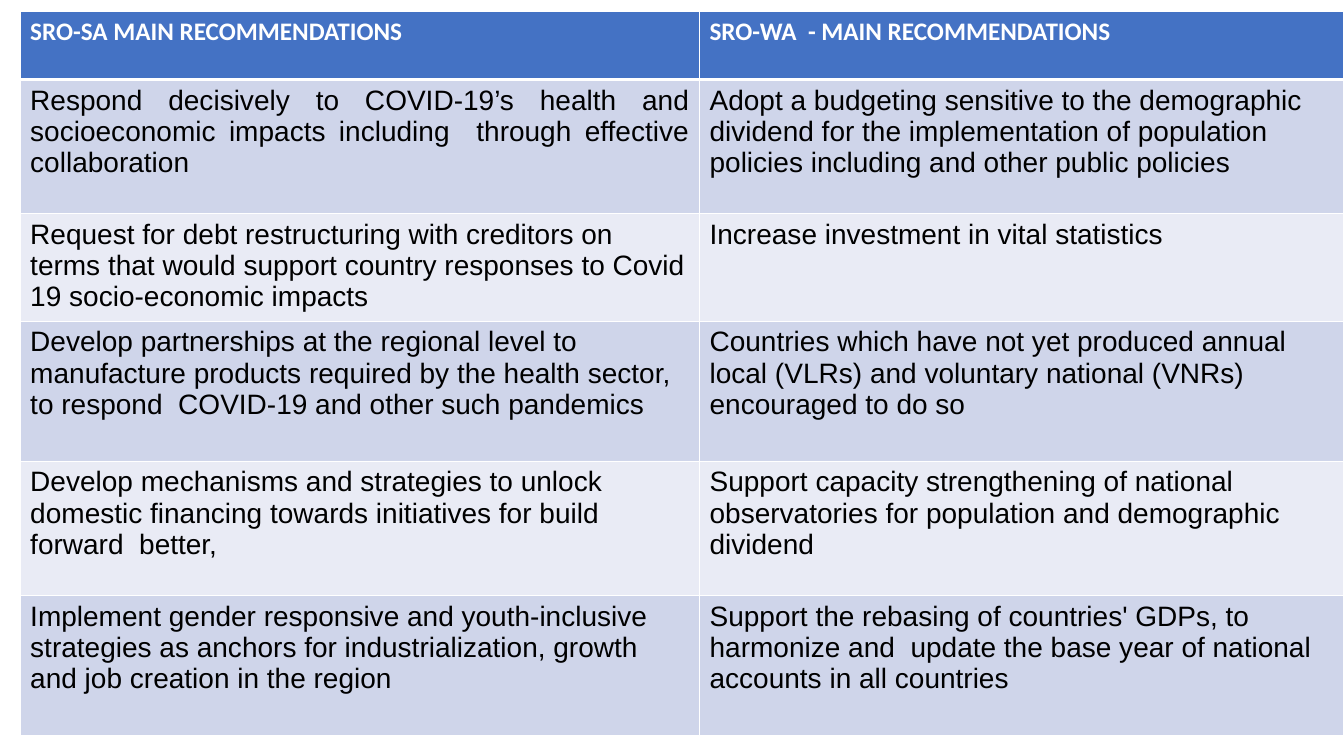
from lxml import etree
from pptx import Presentation
from pptx import util as u
from pptx.dml import color
from pptx.enum import text
from pptx.oxml import ns

COLORS = {"header": "4472C4", "odd": "CFD5EA", "even": "E9EBF5",
          "white": "FFFFFF", "black": "000000"}
COLUMN_WIDTHS = [485.28, 460.08]
ROW_HEIGHTS = [48.96, 95.76, 77.04, 100.08, 95.76, 100.08]
RECOMMENDATIONS = [
    ("SRO-SA MAIN RECOMMENDATIONS", "SRO-WA  - MAIN RECOMMENDATIONS"),
    ("Respond decisively to COVID-19’s health and socioeconomic impacts including  through effective collaboration",
     "Adopt a budgeting sensitive to the demographic dividend for the implementation of population policies including and other public policies"),
    ("Request for debt restructuring with creditors on terms that would support country responses to Covid 19 socio-economic impacts",
     "Increase investment in vital statistics"),
    ("Develop partnerships at the regional level to manufacture products required by the health sector, to respond  COVID-19 and other such pandemics",
     "Countries which have not yet produced annual local (VLRs) and voluntary national (VNRs) encouraged to do so"),
    ("Develop mechanisms and strategies to unlock domestic financing towards initiatives for build forward  better,",
     "Support capacity strengthening of national observatories for population and demographic dividend"),
    ("Implement gender responsive and youth-inclusive strategies as anchors for industrialization, growth and job creation in the region",
     "Support the rebasing of countries' GDPs, to harmonize and  update the base year of national accounts in all countries"),
]


class SlideBuilder:
    """Draws styled elements on the current slide."""

    def __init__(self, slide, colors):
        self.slide = slide
        self.colors = colors

    def table(self, left, top, widths, heights, rows):
        frame = self.slide.shapes.add_table(
            len(heights), len(widths), u.Pt(left), u.Pt(top),
            u.Pt(sum(widths)), u.Pt(sum(heights)))
        table = frame.table
        for column, width in zip(table.columns, widths):
            column.width = u.Pt(width)
        for row, height in zip(table.rows, heights):
            row.height = u.Pt(height)
        for row_index, row in enumerate(rows):
            for column_index, wording in enumerate(row):
                self.cell(table.cell(row_index, column_index), wording, row_index)
        return table

    def cell(self, cell, wording, row_index):
        is_header = row_index == 0
        self.border(cell, "lnL", 1)
        self.border(cell, "lnR", 1)
        self.border(cell, "lnT", 3 if row_index == 1 else 1)
        self.border(cell, "lnB", 3 if is_header else 1)
        fill = "header" if is_header else ("odd" if row_index % 2 else "even")
        cell.fill.solid()
        cell.fill.fore_color.rgb = self.rgb(fill)
        cell.text_frame.text = wording
        font = cell.text_frame.paragraphs[0].runs[0].font
        font.name = "Calibri" if is_header else "Arial"
        font.size = u.Pt(18 if is_header else 20)
        font.bold = is_header
        font.color.rgb = self.rgb("white" if is_header else "black")

    def border(self, cell, side, width):
        properties = cell._tc.get_or_add_tcPr()
        line = etree.SubElement(properties, ns.qn("a:" + side), w=str(u.Pt(width)))
        fill = etree.SubElement(line, ns.qn("a:solidFill"))
        etree.SubElement(fill, ns.qn("a:srgbClr"), val=self.colors["white"])

    def rgb(self, name):
        return color.RGBColor.from_string(self.colors[name])


def main():
    presentation = Presentation()
    presentation.slide_width = u.Pt(960)
    presentation.slide_height = u.Pt(540)
    slide = presentation.slides.add_slide(presentation.slide_layouts[6])
    builder = SlideBuilder(slide, COLORS)
    table = builder.table(14.4, 7.92, COLUMN_WIDTHS, ROW_HEIGHTS, RECOMMENDATIONS)
    first_recommendation = table.cell(1, 0).text_frame.paragraphs[0]
    first_recommendation.alignment = text.PP_ALIGN.JUSTIFY
    presentation.save("out.pptx")


if __name__ == "__main__":
    main()
